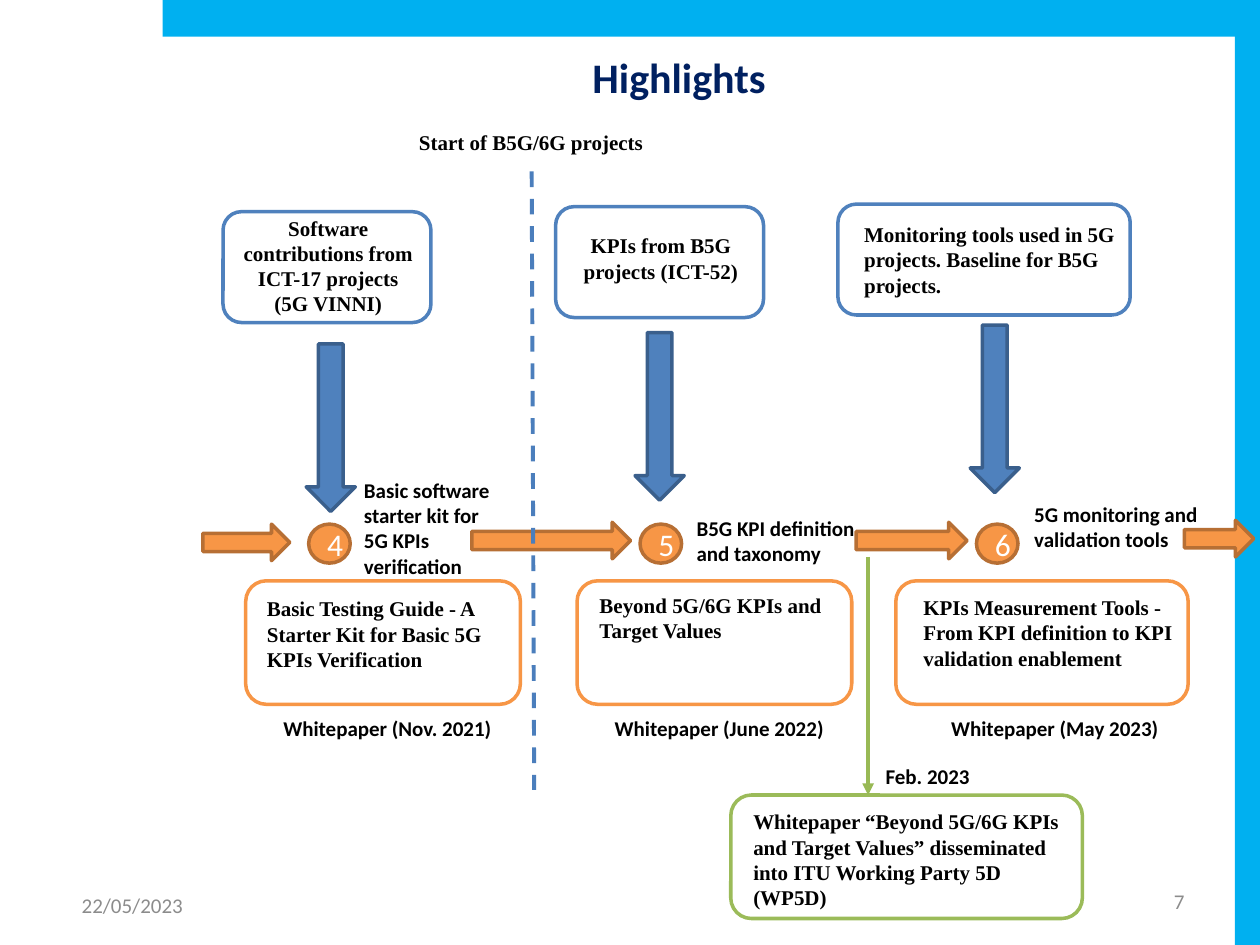
from lxml.etree import SubElement
from pptx import Presentation
from pptx.dml.color import RGBColor
from pptx.enum.dml import MSO_LINE
from pptx.enum.shapes import MSO_CONNECTOR, MSO_SHAPE as Shape
from pptx.enum.text import MSO_ANCHOR as Anchor, MSO_AUTO_SIZE as AutoSize, PP_ALIGN as Align
from pptx.oxml.ns import qn
from pptx.util import Emu, Pt

PX = 9144  # 100 px to the inch

SKY = RGBColor(0x00, 0xB0, 0xF0)
NAVY = RGBColor(0x00, 0x20, 0x60)
GRAY = RGBColor(0x8C, 0x8C, 0x8C)
BLACK = RGBColor(0x00, 0x00, 0x00)
WHITE = RGBColor(0xFF, 0xFF, 0xFF)
ORANGE = RGBColor(0xF7, 0x96, 0x46)
DARK_ORANGE = RGBColor(0xB7, 0x6F, 0x34)
BLUE = RGBColor(0x4F, 0x81, 0xBD)
DARK_BLUE = RGBColor(0x3A, 0x5F, 0x8C)
DASH_BLUE = RGBColor(0x4B, 0x7E, 0xBC)
GREEN = RGBColor(0x9B, 0xBB, 0x59)
LINE_GREEN = RGBColor(0x98, 0xB9, 0x55)

SANS = "Calibri"
SERIF = "Times New Roman"


def px(*lengths):
    return [Emu(length * PX) for length in lengths]


class Page:
    """Holds the text style and the slide being drawn."""

    def __init__(self, slide, size=12):
        self.slide = slide
        self.size = size

    def add_text(self, frame, text, font=SANS, color=BLACK, size=None, bold=True,
                 align=Align.LEFT):
        para = frame.paragraphs[0]
        para.alignment = align
        span = para.add_run()
        span.text = text
        span.font.name = font
        span.font.size = Pt(size or self.size)
        span.font.bold = bold
        span.font.color.rgb = color

    def title(self, text, at):
        box = self.slide.shapes.title
        box.left, box.top, box.width, box.height = px(*at)
        box.text_frame.vertical_anchor = Anchor.TOP
        self.add_text(box.text_frame, text, color=NAVY, size=24, align=Align.CENTER)

    def label(self, text, at, wrap=True, anchor=Anchor.TOP, **style):
        frame = self.slide.shapes.add_textbox(*px(*at)).text_frame
        frame.word_wrap = wrap
        frame.vertical_anchor = anchor
        frame.auto_size = AutoSize.SHAPE_TO_FIT_TEXT if anchor == Anchor.TOP else AutoSize.NONE
        self.add_text(frame, text, **style)

    def shape(self, kind, at, fill, line=None, rotation=0):
        shape = self.slide.shapes.add_shape(kind, *px(*at))
        shape.shadow.inherit = False
        shape.rotation = rotation
        shape.fill.solid()
        shape.fill.fore_color.rgb = fill
        if line is None:
            shape.line.fill.background()
        else:
            shape.line.color.rgb = line
            shape.line.width = Pt(2)
        return shape

    def frame(self, at, line):
        self.shape(Shape.ROUNDED_RECTANGLE, at, WHITE, line)

    def timeline_arrow(self, left, top, length):
        """Down arrow turned to the right; left and top are those before turning."""
        self.shape(Shape.DOWN_ARROW, (left, top, 29, length), ORANGE, DARK_ORANGE, 270)

    def number(self, text, left):
        circle = self.shape(Shape.OVAL, (left, 416, 33, 31), ORANGE, DARK_ORANGE)
        circle.text_frame.vertical_anchor = Anchor.MIDDLE
        self.add_text(circle.text_frame, text, color=WHITE, size=18, bold=False,
                      align=Align.CENTER)

    def line(self, start, end, color, dash=None, arrow=False):
        line = self.slide.shapes.add_connector(MSO_CONNECTOR.STRAIGHT, *px(*start, *end))
        line.line.color.rgb = color
        line.line.width = Pt(2.25)
        if dash is not None:
            line.line.dash_style = dash
        properties = line._element.spPr
        if arrow:
            SubElement(properties.find(qn("a:ln")), qn("a:tailEnd"), type="triangle")
        SubElement(properties, qn("a:effectLst"))


# number, circle left, frame (left, width), guide and its place, date and its left,
# arrow, tool and its place
MILESTONES = [
    ("4", 245, (195, 218),
     "Basic Testing Guide - A Starter Kit for Basic 5G KPIs Verification", (202, 468, 214, 71),
     "Whitepaper (Nov. 2021)", 215, (181, 396, 69),
     "Basic software starter kit for 5G KPIs verification", (279, 374, 127, 91)),
    ("5", 508, (458, 218),
     "Beyond 5G/6G KPIs and Target Values", (466, 465, 214, 50),
     "Whitepaper (June 2022)", 478, (423, 366, 126),
     "B5G KPI definition and taxonomy", (543, 404, 156, 50)),
    ("6", 775, (711, 232),
     "KPIs Measurement Tools - From KPI definition to KPI validation enablement",
     (723, 467, 232, 71),
     "Whitepaper (May 2023)", 745, (709, 385, 88),
     "5G monitoring and validation tools", (811, 393, 156, 50)),
]

# arrow (left, top), frame (left, top, width), text, its place, alignment
INPUTS = [
    ((770, 258), (665, 162, 232),
     "Monitoring tools used in 5G projects. Baseline for B5G projects.",
     (676, 171, 232, 71), Align.LEFT),
    ((504, 264), (441, 164, 165),
     "KPIs from B5G projects (ICT-52)", (445, 180, 159, 50), Align.CENTER),
    ((243, 273), (177, 168, 165),
     "Software contributions from ICT-17 projects (5G VINNI)",
     (181, 166, 159, 91), Align.CENTER),
]


def main():
    deck = Presentation()
    deck.slide_width, deck.slide_height = px(1000, 750)
    page = Page(deck.slides.add_slide(deck.slide_layouts[5]))

    page.shape(Shape.RECTANGLE, (615, 365, 750, 20), SKY, rotation=90)
    page.shape(Shape.RECTANGLE, (129, 0, 851, 29), SKY)
    footer = dict(anchor=Anchor.MIDDLE, color=GRAY, bold=False)
    page.label("22/05/2023", (55, 698, 233, 40), **footer)
    page.label("7", (717, 695, 233, 40), align=Align.RIGHT, **footer)
    page.title("Highlights", (224, 36, 630, 94))

    for (number, circle_left, (left, width), guide, guide_at,
         date, date_left, arrow, tool, tool_at) in MILESTONES:
        page.frame((left, 461, width, 98), ORANGE)
        page.label(guide, guide_at, font=SERIF)
        page.label(date, (date_left, 563, 188, 30), wrap=False)
        page.timeline_arrow(*arrow)
        page.number(number, circle_left)
        page.label(tool, tool_at)

    for arrow, (left, top, width), text, text_at, align in INPUTS:
        page.shape(Shape.DOWN_ARROW, (*arrow, 39, 133), BLUE, DARK_BLUE)
        page.frame((left, top, width, 88), BLUE)
        page.label(text, text_at, font=SERIF, align=align)

    page.line((422, 136), (424, 627), DASH_BLUE, dash=MSO_LINE.DASH)
    page.label("Start of B5G/6G projects", (316, 98, 211, 30), font=SERIF, align=Align.CENTER)
    page.timeline_arrow(953, 400, 55)

    page.frame((580, 631, 279, 98), GREEN)
    page.label("Whitepaper “Beyond 5G/6G KPIs and Target Values” disseminated "
               "into ITU Working Party 5D (WP5D)", (588, 637, 268, 91), font=SERIF)
    page.line((689, 442), (689, 631), LINE_GREEN, arrow=True)
    page.label("Feb. 2023", (693, 601, 88, 30), wrap=False)

    deck.save("out.pptx")


if __name__ == "__main__":
    main()
